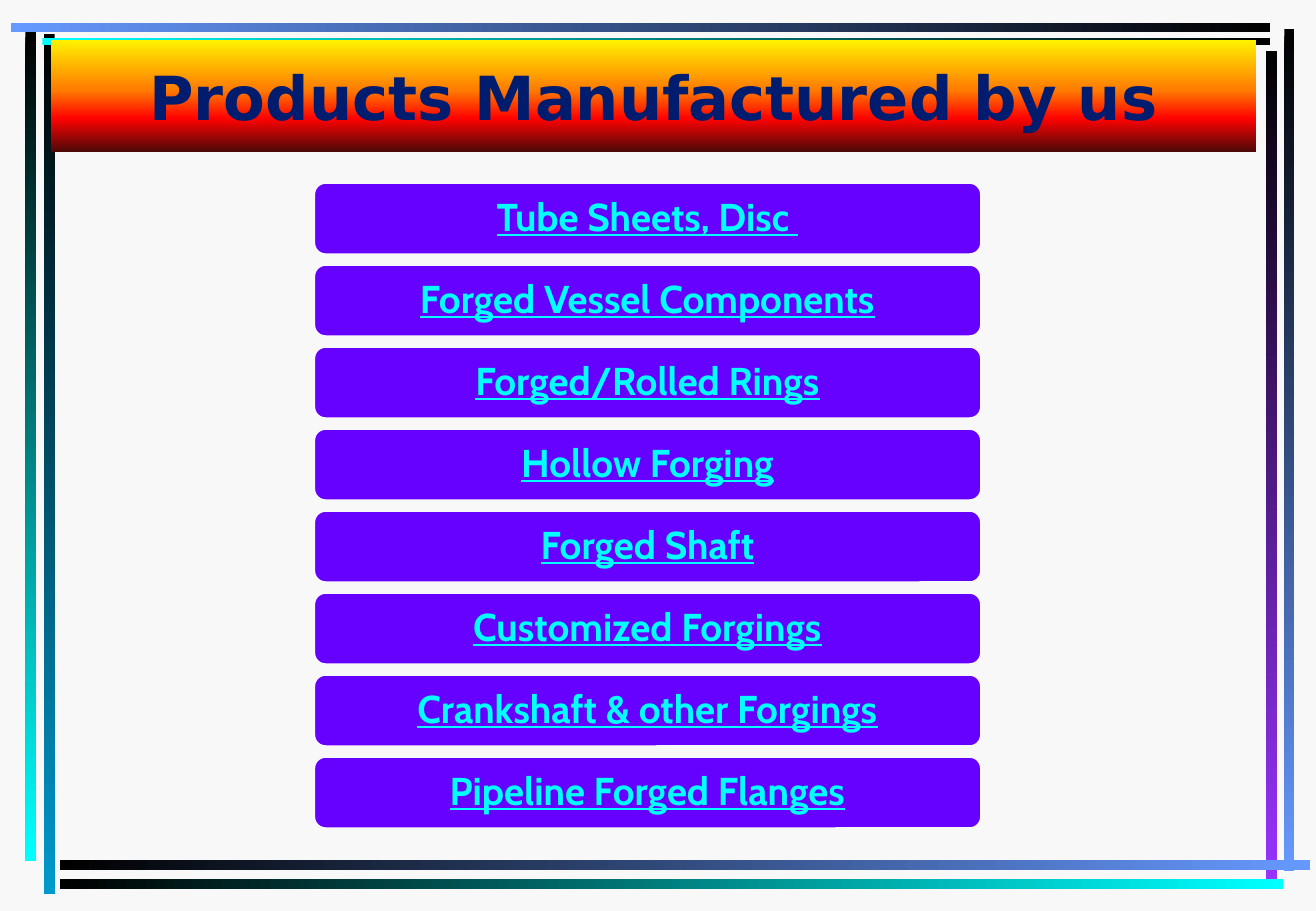
from lxml import etree
from pptx import Presentation
from pptx.dml.color import RGBColor
from pptx.enum.shapes import MSO_SHAPE as SHAPE
from pptx.enum.text import MSO_ANCHOR as ANCHOR, PP_ALIGN as ALIGN
from pptx.oxml.ns import qn
from pptx.util import Inches, Pt

PAPER = RGBColor(0xF8, 0xF8, 0xF8)
BLACK = RGBColor(0x00, 0x00, 0x00)
CYAN = RGBColor(0x00, 0xFF, 0xFF)
TEAL = RGBColor(0x00, 0x99, 0xCC)
SKY = RGBColor(0x66, 0x99, 0xFF)
PURPLE = RGBColor(0x99, 0x33, 0xFF)
VIOLET = RGBColor(0x66, 0x00, 0xFF)
NAVY = RGBColor(0x00, 0x1C, 0x6E)
YELLOW = RGBColor(0xFF, 0xF2, 0x00)
ORANGE = RGBColor(0xFF, 0x7A, 0x00)
RED = RGBColor(0xFF, 0x03, 0x00)
MAROON = RGBColor(0x4D, 0x08, 0x08)

# left, top, width, height, first colour, last colour
FRAME_BARS = [
    (0.36, 0.28, 0.09, 7.08, BLACK, TEAL),
    (0.21, 0.25, 0.09, 6.84, BLACK, CYAN),
    (10.57, 0.24, 0.08, 6.93, BLACK, SKY),
    (10.42, 0.42, 0.09, 6.83, BLACK, PURPLE),
    (0.49, 7.08, 10.29, 0.08, BLACK, SKY),
    (0.49, 7.24, 10.07, 0.08, BLACK, CYAN),
    (0.35, 0.31, 10.1, 0.06, CYAN, BLACK),
    (0.09, 0.19, 10.36, 0.07, SKY, BLACK),
]
PRODUCTS = [
    "Tube Sheets, Disc ",
    "Forged Vessel Components",
    "Forged/Rolled Rings",
    "Hollow Forging",
    "Forged Shaft",
    "Customized Forgings",
    "Crankshaft & other Forgings",
    "Pipeline Forged Flanges",
]
FIRST_TOP, PITCH = 1.5, 0.675


class ProductSlide:
    title_font = "DejaVu Sans"
    button_font = "Cabin"

    def __init__(self, prs):
        self.s = prs.slides.add_slide(prs.slide_layouts[5])
        fill = self.s.background.fill
        fill.solid()
        fill.fore_color.rgb = PAPER

    def gradient(self, shape, stops, angle):
        """Fill with (percent, colour) stops; angle is counter-clockwise."""
        shape.fill.gradient()
        shape.fill.gradient_angle = angle
        gs_list = shape.element.spPr.find(".//" + qn("a:gsLst"))
        for gs in list(gs_list):
            gs_list.remove(gs)
        for percent, color in stops:
            gs = etree.SubElement(gs_list, qn("a:gs"), pos=str(percent * 1000))
            etree.SubElement(gs, qn("a:srgbClr"), val=str(color))

    def shape(self, kind, left, top, width, height):
        sp = self.s.shapes.add_shape(
            kind, Inches(left), Inches(top), Inches(width), Inches(height))
        sp.shadow.inherit = False
        return sp

    def text(self, tf, text, font, size, color, underline=False):
        tf.word_wrap = True
        tf.vertical_anchor = ANCHOR.MIDDLE
        p = tf.paragraphs[0]
        p.alignment = ALIGN.CENTER
        r = p.add_run()
        r.text = text
        r.font.name = font
        r.font.size = Pt(size)
        r.font.bold = True
        r.font.underline = underline
        r.font.color.rgb = color
        return p

    def bar(self, left, top, width, height, first, last):
        sp = self.shape(SHAPE.RECTANGLE, left, top, width, height)
        sp.line.fill.background()
        angle = 270 if height > width else 0
        self.gradient(sp, [(0, first), (100, last)], angle)

    def title(self, text):
        sp = self.s.shapes.title
        sp.left, sp.top = Inches(0.42), Inches(0.33)
        sp.width, sp.height = Inches(9.92), Inches(0.92)
        self.gradient(
            sp, [(0, YELLOW), (45, ORANGE), (70, RED), (100, MAROON)], 270)
        self.text(sp.text_frame, text, self.title_font, 36, NAVY)
        # The banner lies over the frame bars
        sp.element.getparent().append(sp.element)

    def button(self, top, text):
        sp = self.shape(SHAPE.ROUNDED_RECTANGLE, 2.58, top, 5.5, 0.6)
        sp.fill.solid()
        sp.fill.fore_color.rgb = VIOLET
        sp.line.color.rgb = PAPER
        sp.line.width = Pt(2)
        p = self.text(sp.text_frame, text, self.button_font, 23, CYAN, True)
        p.line_spacing = 0.9


def main():
    prs = Presentation()
    prs.slide_width, prs.slide_height = Inches(10.83), Inches(7.5)
    slide = ProductSlide(prs)
    for bar in FRAME_BARS:
        slide.bar(*bar)
    slide.title("Products Manufactured by us")
    for i, product in enumerate(PRODUCTS):
        slide.button(FIRST_TOP + i * PITCH, product)
    prs.save("out.pptx")


if __name__ == "__main__":
    main()
